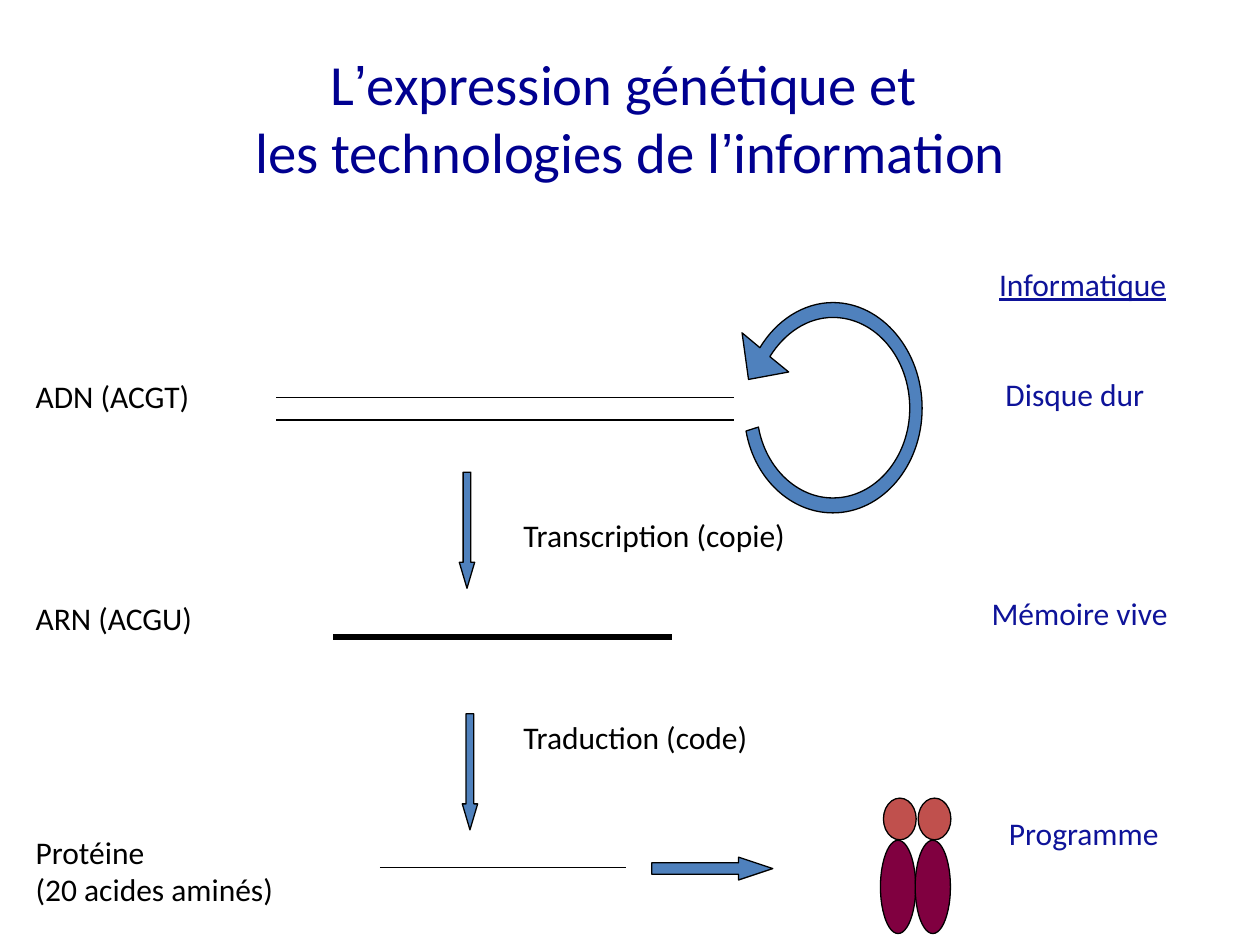
from collections import namedtuple
from dataclasses import dataclass

from lxml import etree
from pptx import Presentation
from pptx import util as u
from pptx.dml.color import RGBColor
from pptx.enum import shapes as sh, text as tx
from pptx.oxml import ns

Box = namedtuple("Box", "x y w h")


@dataclass(frozen=True)
class Theme:
    font: str = "Calibri"
    mark: str = "Arial"
    title: str = "000090"
    ink: str = "000000"
    tech: str = "0E1399"
    arrow: str = "4F81BD"
    head: str = "C0504D"
    body: str = "800040"
    big: float = 32.4
    small: float = 18
    thin: float = 0.75
    thick: float = 3


T = Theme()


def cm(*vals):
    return [u.Cm(v) for v in vals]


def style(font, size, color, name=T.font):
    font.size, font.name = u.Pt(size), name
    font.color.rgb = RGBColor.from_string(color)


def paint(shape, color):
    shape.shadow.inherit = False
    shape.fill.solid()
    shape.fill.fore_color.rgb = RGBColor.from_string(color)
    shape.line.color.rgb = RGBColor.from_string(T.ink)
    shape.line.width = u.Pt(T.thin)


def label(slide, box, text, color=T.ink, under=None):
    frame = slide.shapes.add_textbox(*cm(*box)).text_frame
    frame.word_wrap = False
    frame.auto_size = tx.MSO_AUTO_SIZE.SHAPE_TO_FIT_TEXT
    frame.text = text
    for para in frame.paragraphs:
        for run in para.runs:
            style(run.font, T.small, color)
            run.font.underline = under


def strand(parts, x, y, w, width=T.thin):
    line = parts.add_connector(sh.MSO_CONNECTOR.STRAIGHT, *cm(x, y, x + w, y))
    line.line.color.rgb = RGBColor.from_string(T.ink)
    line.line.width = u.Pt(width)
    etree.SubElement(line._element.spPr, ns.qn("a:effectLst"))


def arrow(slide, box, kind, tip):
    shape = slide.shapes.add_shape(kind, *cm(*box))
    shape.adjustments[0], shape.adjustments[1] = 0.5, tip
    paint(shape, T.arrow)


def title(slide, box):
    shape = slide.shapes.title
    shape.left, shape.top, shape.width, shape.height = cm(*box)
    frame = shape.text_frame
    frame.word_wrap = True
    frame.vertical_anchor = tx.MSO_ANCHOR.MIDDLE
    para = frame.paragraphs[0]
    para.alignment = tx.PP_ALIGN.CENTER
    for piece in ("L", "’", "expression génétique et ", "\n",
                  "les technologies de l", "’", "information"):
        if piece == "\n":
            para.add_line_break()
            continue
        run = para.add_run()
        run.text = piece
        style(run.font, T.big, T.title, T.mark if piece == "’" else T.font)


def bend(lines):
    """Turn three straight segments into one cubic curve."""
    curve = etree.Element(ns.qn("a:cubicBezTo"))
    lines[0].addprevious(curve)
    for line in lines:
        curve.append(line[0])
        line.getparent().remove(line)


def loop(slide, box):
    """Draw the replication arrow: a ring open on the left, with a barbed head."""
    start = (0.56, 1.09)
    inner = [(0.86, 0.61), (1.32, 0.3), (1.83, 0.3),
             (2.69, 0.3), (3.38, 1.12), (3.38, 2.13),
             (3.38, 3.12), (2.69, 3.94), (1.83, 3.94),
             (1.12, 3.94), (0.48, 3.35), (0.33, 2.51)]
    end = [(0.08, 2.59)]
    outer = [(0.25, 3.56), (0.99, 4.24), (1.83, 4.24),
             (2.82, 4.24), (3.63, 3.3), (3.63, 2.13),
             (3.63, 0.97), (2.82, 0), (1.83, 0),
             (1.24, 0), (0.69, 0.36), (0.36, 0.91)]
    barb = [(0, 0.61), (0.13, 1.55), (0.94, 1.4), start]
    first, *rest = [cm(box.x + x, box.y + y)
                    for x, y in [start] + inner + end + outer + barb]
    pen = slide.shapes.build_freeform(*first)
    pen.add_line_segments(rest, close=True)
    shape = pen.convert_to_shape()
    lines = list(shape._element.iter(ns.qn("a:lnTo")))
    for part in (0, len(inner) + len(end)):
        for i in range(part, part + len(inner), 3):
            bend(lines[i:i + 3])
    paint(shape, T.arrow)


def molecules(slide, box):
    """Place the names of the molecules and their strands, one row each."""
    for text, y, w, h in (("ADN (ACGT)", 0, 3.66, 1.02),
                          ("ARN (ACGU)", 4.48, 3.71, 1.02),
                          ("Protéine\n(20 acides aminés)", 9.19, 5.36, 1.8)):
        label(slide, Box(box.x, box.y + y, w, h), text)
    pair = slide.shapes.add_group_shape().shapes
    for y in (0.54, 1):
        strand(pair, box.x + 5.1, box.y + y, 9.22)
    strand(slide.shapes, box.x + 6.25, box.y + 5.37, 6.83, T.thick)
    strand(slide.shapes, box.x + 7.19, box.y + 10.02, 4.95)


def steps(slide, box):
    """Place the arrows between rows with the names of the two steps."""
    down, right = sh.MSO_SHAPE.DOWN_ARROW, sh.MSO_SHAPE.RIGHT_ARROW
    for text, dx, dy, gap, w in (("Transcription (copie)", 0, 0, 0.76, 5.89),
                                 ("Traduction (code)", 0.06, 4.87, -0.05, 5.13)):
        x, y = box.x + dx, box.y + dy
        arrow(slide, Box(x, y, 0.31, 2.34), down, 1.69)
        label(slide, Box(box.x + 1.04, y + gap, w, 1.02), text)
    arrow(slide, Box(box.x + 3.88, box.y + 7.76, 2.44, 0.46), right, 1.5)


def protein(slide, box):
    """Draw the folded protein as two heads on two bodies."""
    parts = slide.shapes.add_group_shape().shapes
    for color, dx, dy, gap, w, h in ((T.head, 0.06, 0, 0.7, 0.66, 0.84),
                                     (T.body, 0, 0.85, 0.7, 0.71, 1.88)):
        for i in range(2):
            oval = parts.add_shape(sh.MSO_SHAPE.OVAL,
                                   *cm(box.x + dx + i * gap, box.y + dy, w, h))
            paint(oval, color)


def computing(slide, box):
    """Place the heading and the computing counterpart of each molecule."""
    for text, x, y, w in (("Informatique", 0.15, 0, 3.94),
                          ("Disque dur", 0.28, 2.23, 3.35),
                          ("Mémoire vive", 0, 6.64, 4.11),
                          ("Programme", 0.35, 11.07, 3.58)):
        label(slide, Box(box.x + x, box.y + y, w, 1.02), text, T.tech,
              True if y == 0 else None)


def main():
    deck = Presentation()
    deck.slide_width, deck.slide_height = cm(25.4, 19.05)
    slide = deck.slides.add_slide(deck.slide_layouts[5])
    title(slide, Box(1.27, 0.76, 22.86, 3.18))
    loop(slide, Box(14.96, 6.1, 3.63, 4.24))
    molecules(slide, Box(0.47, 7.47, 14.32, 11))
    steps(slide, Box(9.26, 9.52, 6.91, 8.23))
    protein(slide, Box(17.75, 16.09, 1.41, 2.74))
    computing(slide, Box(19.74, 5.21, 4.11, 12.09))
    deck.save("out.pptx")


if __name__ == "__main__":
    main()
